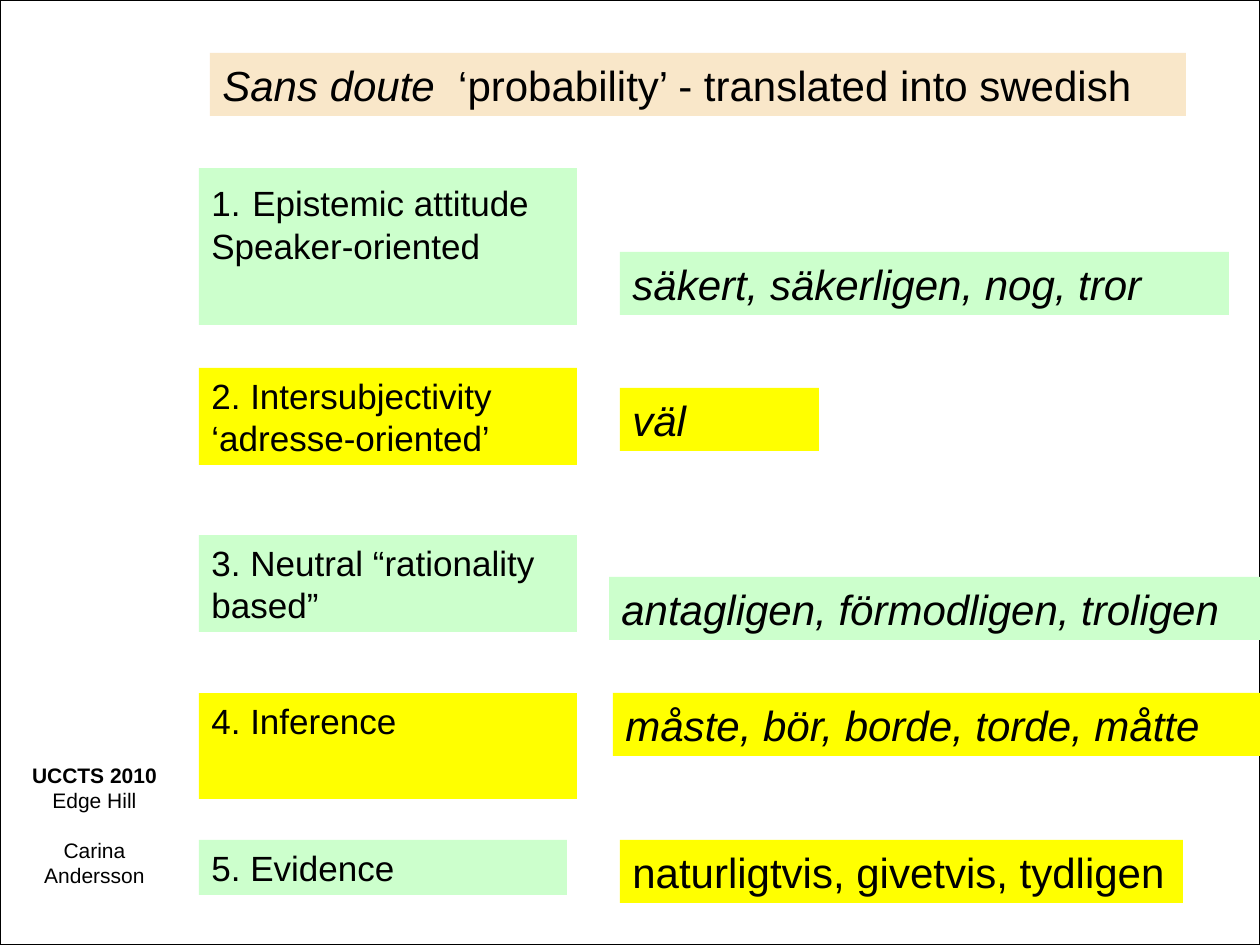
import pptx
import pptx.util
import pptx.dml.color
import pptx.enum.shapes
import pptx.enum.text

PX = 914400 / 126
COLOURS = {"black": "000000", "sand": "F9E7C9", "green": "CCFFCC", "yellow": "FFFF00"}


class SlideBuilder:
    font = "Arial"

    def __init__(self, slide):
        self.slide = slide

    def colour(self, name):
        return pptx.dml.color.RGBColor.from_string(COLOURS[name])

    def emu(self, *lengths):
        return [pptx.util.Emu(round(length * PX)) for length in lengths]

    def rectangle(self, at):
        shape = self.slide.shapes.add_shape(
            pptx.enum.shapes.MSO_SHAPE.RECTANGLE, *self.emu(*at))
        shape.shadow.inherit = False
        return shape

    def frame(self, at):
        border = self.rectangle(at)
        border.fill.background()
        border.line.color.rgb = self.colour("black")
        border.line.width = pptx.util.Pt(0.75)

    def add_text(self, text_frame, paragraphs, align):
        """Each paragraph is a list of (text, size, style) runs."""
        text_frame.word_wrap = True
        text_frame.vertical_anchor = pptx.enum.text.MSO_ANCHOR.TOP
        for index, runs in enumerate(paragraphs):
            paragraph = text_frame.paragraphs[0] if index == 0 else text_frame.add_paragraph()
            paragraph.alignment = align
            for text, size, style in runs:
                run = paragraph.add_run()
                run.text = text
                run.font.name = self.font
                run.font.size = pptx.util.Pt(size)
                run.font.bold = style == "bold"
                run.font.italic = style == "italic"
                run.font.color.rgb = self.colour("black")

    def panel(self, at, fill, paragraphs):
        panel = self.rectangle(at)
        panel.fill.solid()
        panel.fill.fore_color.rgb = self.colour(fill)
        panel.line.fill.background()
        self.add_text(panel.text_frame, paragraphs, pptx.enum.text.PP_ALIGN.LEFT)

    def label(self, at, paragraphs):
        label = self.slide.shapes.add_textbox(*self.emu(*at))
        self.add_text(label.text_frame, paragraphs, pptx.enum.text.PP_ALIGN.CENTER)
        return label


def main():
    deck = pptx.Presentation()
    deck.slide_width, deck.slide_height = pptx.util.Inches(10), pptx.util.Inches(7.5)
    builder = SlideBuilder(deck.slides.add_slide(deck.slide_layouts[6]))

    # Border and title
    builder.frame((0, 0, 1260, 945))
    builder.panel((210, 53, 976, 63), "sand", [[
        ("Sans doute ", 24, "italic"),
        (" ‘probability’ - translated into swedish", 24, "plain")]])

    # Meanings: top, width, height, fill, paragraphs
    meanings = [
        (168, 378, 157, "green", [
            [("1.", 20, "plain"), (" ", 24, "plain"), ("Epistemic attitude", 20, "plain")],
            [("Speaker-oriented", 20, "plain")]]),
        (368, 378, 97, "yellow", [
            [("2. Intersubjectivity", 20, "plain")], [("‘adresse-oriented’", 20, "plain")]]),
        (535, 378, 97, "green", [
            [("3. Neutral “rationality", 20, "plain")], [("based”", 20, "plain")]]),
        (693, 378, 106, "yellow", [[("4. Inference", 20, "plain")]]),
        (840, 368, 55, "green", [[("5. Evidence", 20, "plain")]]),
    ]
    for top, width, height, fill, paragraphs in meanings:
        builder.panel((199, top, width, height), fill, paragraphs)

    # Swedish translations: left, top, width, fill, words, style
    translations = [
        (620, 252, 609, "green", "säkert, säkerligen, nog, tror", "italic"),
        (620, 388, 199, "yellow", "väl", "italic"),
        (609, 577, 651, "green", "antagligen, förmodligen, troligen", "italic"),
        (613, 693, 647, "yellow", "måste, bör, borde, torde, måtte", "italic"),
        (620, 840, 563, "yellow", "naturligtvis, givetvis, tydligen", "plain"),
    ]
    for left, top, width, fill, words, style in translations:
        builder.panel((left, top, width, 63), fill, [[(words, 24, style)]])

    # Conference and author
    credit = builder.label((0, 756, 189, 168), [
        [("UCCTS 2010", 12, "bold")],
        [("Edge Hill", 12, "plain")],
        [("Carina Andersson", 12, "plain")]])
    credit.text_frame.paragraphs[2].space_before = pptx.util.Pt(14.4)

    deck.save("out.pptx")


if __name__ == "__main__":
    main()
